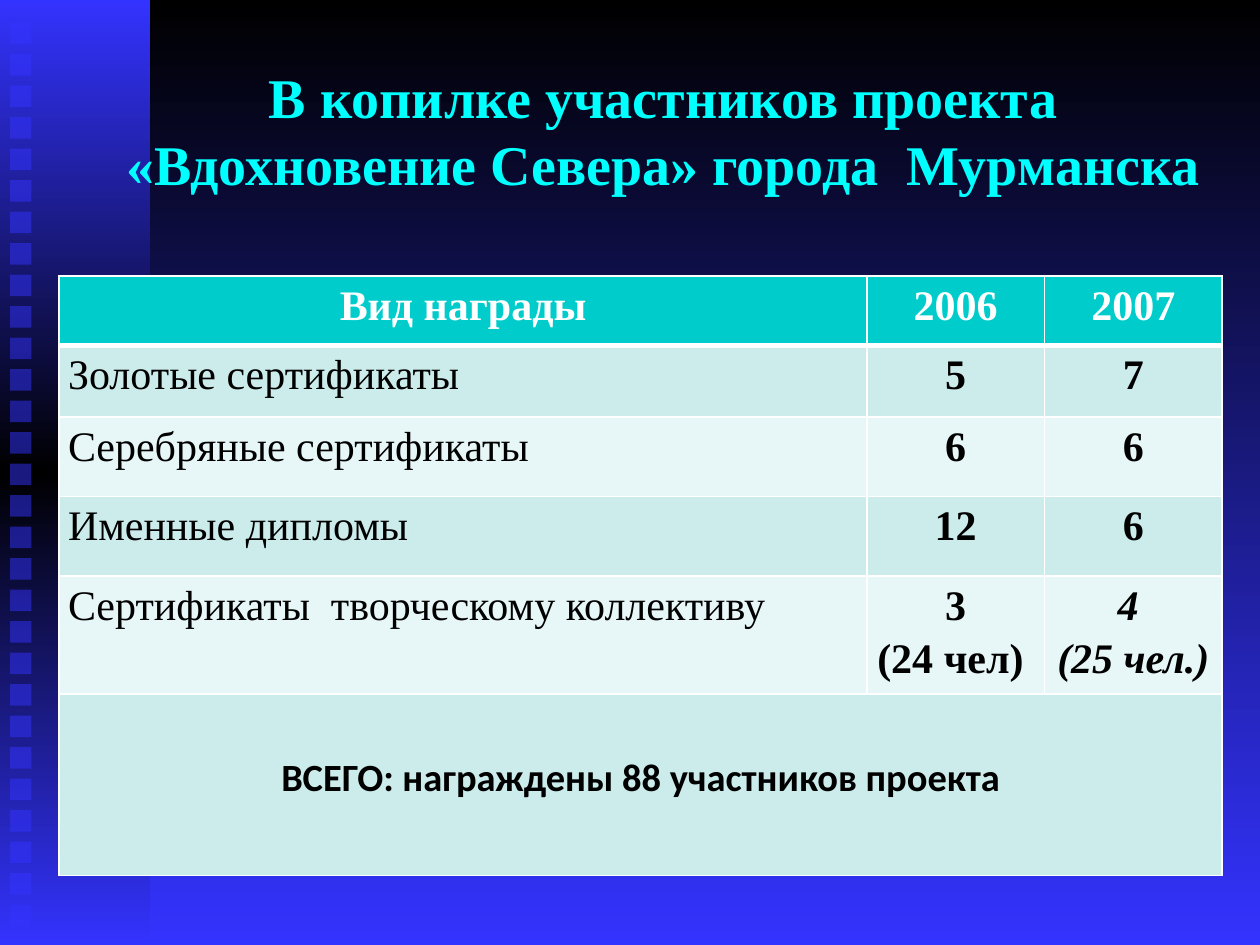
from copy import deepcopy
from dataclasses import dataclass

from lxml import etree
from pptx import Presentation
from pptx.dml.color import RGBColor
from pptx.enum.shapes import MSO_SHAPE
from pptx.enum.text import MSO_ANCHOR, PP_ALIGN
from pptx.oxml.ns import qn
from pptx.util import Inches, Pt

RECTANGLE = MSO_SHAPE.RECTANGLE
BOTTOM = MSO_ANCHOR.BOTTOM
LEFT, CENTER = PP_ALIGN.LEFT, PP_ALIGN.CENTER
TITLE_ONLY = 5


@dataclass(frozen=True)
class Theme:
    black: str = "000000"
    blue: str = "3333FF"
    cyan: str = "00FFFF"
    white: str = "FFFFFF"
    header: str = "00CCCC"
    bands: tuple = ("CCECEC", "E7F6F6")
    serif: str = "Times New Roman"
    sans: str = "Calibri"
    title_size: int = 32
    body_size: int = 24
    total_size: int = 22
    line: int = 1
    heavy_line: int = 3


THEME = Theme()

TITLE = "В копилке участников проекта «Вдохновение Севера» города  Мурманска"
HEADINGS = ("Вид награды", "2006", "2007")
AWARDS = (
    ("Золотые сертификаты", "5", "7"),
    ("Серебряные сертификаты", "6", "6"),
    ("Именные дипломы", "12", "6"),
    ("Сертификаты  творческому коллективу", "3\n(24 чел) ", "4 \n(25 чел.)"),
)
TOTAL = "ВСЕГО: награждены 88 участников проекта"
COLUMN_WIDTHS = (6.41, 1.41, 1.41)
ROW_HEIGHTS = (0.55, 0.57, 0.63, 0.63, 0.94, 1.44)


def set_attributes(target, values):
    for name, value in values.items():
        setattr(target, name, value)


def format_font(font, color, size, name=THEME.serif, bold=True, italic=False):
    set_attributes(font, {"name": name, "size": Pt(size), "bold": bold, "italic": italic})
    font.color.rgb = RGBColor.from_string(color)


def set_gradient(fill, element, colors):
    """Fill from top to bottom with evenly spaced colours."""
    fill.gradient()
    fill.gradient_angle = 270
    stop_list = element.find(".//" + qn("a:gsLst"))
    while len(stop_list) < len(colors):
        stop_list.append(deepcopy(stop_list[0]))
    for index, (stop, color) in enumerate(zip(fill.gradient_stops, colors)):
        stop.position = index / (len(colors) - 1)
        stop.color.rgb = RGBColor.from_string(color)


def add_rectangle(slide, left, top, width, height):
    shape = slide.shapes.add_shape(
        RECTANGLE, Inches(left), Inches(top), Inches(width), Inches(height))
    shape.shadow.inherit = False
    shape.line.fill.background()
    return shape


def add_side_band(slide, left, top, width, height):
    band = add_rectangle(slide, left, top, width, height)
    set_gradient(band.fill, band._element, (THEME.blue, THEME.black, THEME.blue))

    # Column of half-transparent squares
    for index in range(29):
        square = add_rectangle(slide, left + 0.08, top + 0.18 + 0.25 * index, 0.17, 0.17)
        square.fill.solid()
        square.fill.fore_color.rgb = RGBColor.from_string(THEME.blue)
        color = square._element.spPr.find(".//" + qn("a:srgbClr"))
        etree.SubElement(color, qn("a:alpha"), val="50000")


def place_title(slide, left, top, width, height):
    title = slide.shapes.title
    set_attributes(title, {"left": Inches(left), "top": Inches(top),
                           "width": Inches(width), "height": Inches(height)})
    frame = title.text_frame
    set_attributes(frame, {
        "text": TITLE, "word_wrap": True, "vertical_anchor": BOTTOM,
        "margin_left": Inches(0.1), "margin_right": Inches(0.1),
        "margin_top": 0, "margin_bottom": Inches(0.35)})
    paragraph = frame.paragraphs[0]
    paragraph.alignment = CENTER
    format_font(paragraph.runs[0].font, THEME.cyan, THEME.title_size)


def set_borders(cell, top, bottom):
    properties = cell._tc.get_or_add_tcPr()
    widths = {"a:lnL": THEME.line, "a:lnR": THEME.line, "a:lnT": top, "a:lnB": bottom}
    for index, (tag, width) in enumerate(widths.items()):
        line = etree.Element(qn(tag), w=str(Pt(width)))
        solid = etree.SubElement(line, qn("a:solidFill"))
        etree.SubElement(solid, qn("a:srgbClr"), val=THEME.white)
        properties.insert(index, line)


def fill_cell(cell, text, fill, alignment, **font_values):
    cell.fill.solid()
    cell.fill.fore_color.rgb = RGBColor.from_string(fill)
    set_attributes(cell, {"margin_left": Inches(0.07), "margin_right": Inches(0.07),
                          "margin_top": 0, "margin_bottom": 0})
    cell.text_frame.text = text
    for paragraph in cell.text_frame.paragraphs:
        set_attributes(paragraph, {"alignment": alignment, "line_spacing": 1.15})
        for run in paragraph.runs:
            format_font(run.font, **font_values)


def add_awards_table(slide, left, top, width, height):
    table = slide.shapes.add_table(
        len(ROW_HEIGHTS), len(COLUMN_WIDTHS),
        Inches(left), Inches(top), Inches(width), Inches(height)).table
    table.horz_banding = False
    for column, column_width in zip(table.columns, COLUMN_WIDTHS):
        column.width = Inches(column_width)
    for row, row_height in zip(table.rows, ROW_HEIGHTS):
        row.height = Inches(row_height)

    # Header row
    for column, heading in enumerate(HEADINGS):
        fill_cell(table.cell(0, column), heading, THEME.header, CENTER,
                  color=THEME.white, size=THEME.body_size)

    # Award rows
    for row, award in enumerate(AWARDS, start=1):
        for column, text in enumerate(award):
            fill_cell(table.cell(row, column), text, THEME.bands[(row - 1) % 2],
                      CENTER if column else LEFT,
                      color=THEME.black, size=THEME.body_size, bold=column > 0,
                      italic=(row, column) == (len(AWARDS), 2))

    # Total across all columns
    last = len(ROW_HEIGHTS) - 1
    total = table.cell(last, 0)
    total.merge(table.cell(last, len(COLUMN_WIDTHS) - 1))
    fill_cell(total, TOTAL, THEME.bands[0], CENTER,
              color=THEME.black, size=THEME.total_size, name=THEME.sans)
    total.margin_top = Inches(0.43)

    # White grid with a heavy rule under the header
    for row in range(len(ROW_HEIGHTS)):
        for column in range(len(COLUMN_WIDTHS)):
            set_borders(table.cell(row, column),
                        top=THEME.heavy_line if row == 1 else THEME.line,
                        bottom=THEME.heavy_line if row == 0 else THEME.line)


def main():
    presentation = Presentation()
    presentation.slide_width = Inches(10)
    presentation.slide_height = Inches(7.5)
    slide = presentation.slides.add_slide(presentation.slide_layouts[TITLE_ONLY])
    set_gradient(slide.background.fill, slide._element, (THEME.black, THEME.blue))

    add_side_band(slide, 0, 0, 1.19, 7.5)
    # The title lies over the side band
    slide.shapes._spTree.append(slide.shapes.title._element)
    place_title(slide, 0.78, 0.7, 8.97, 1.21)
    add_awards_table(slide, 0.47, 2.19, 9.22, 4.76)
    presentation.save("out.pptx")


if __name__ == "__main__":
    main()
